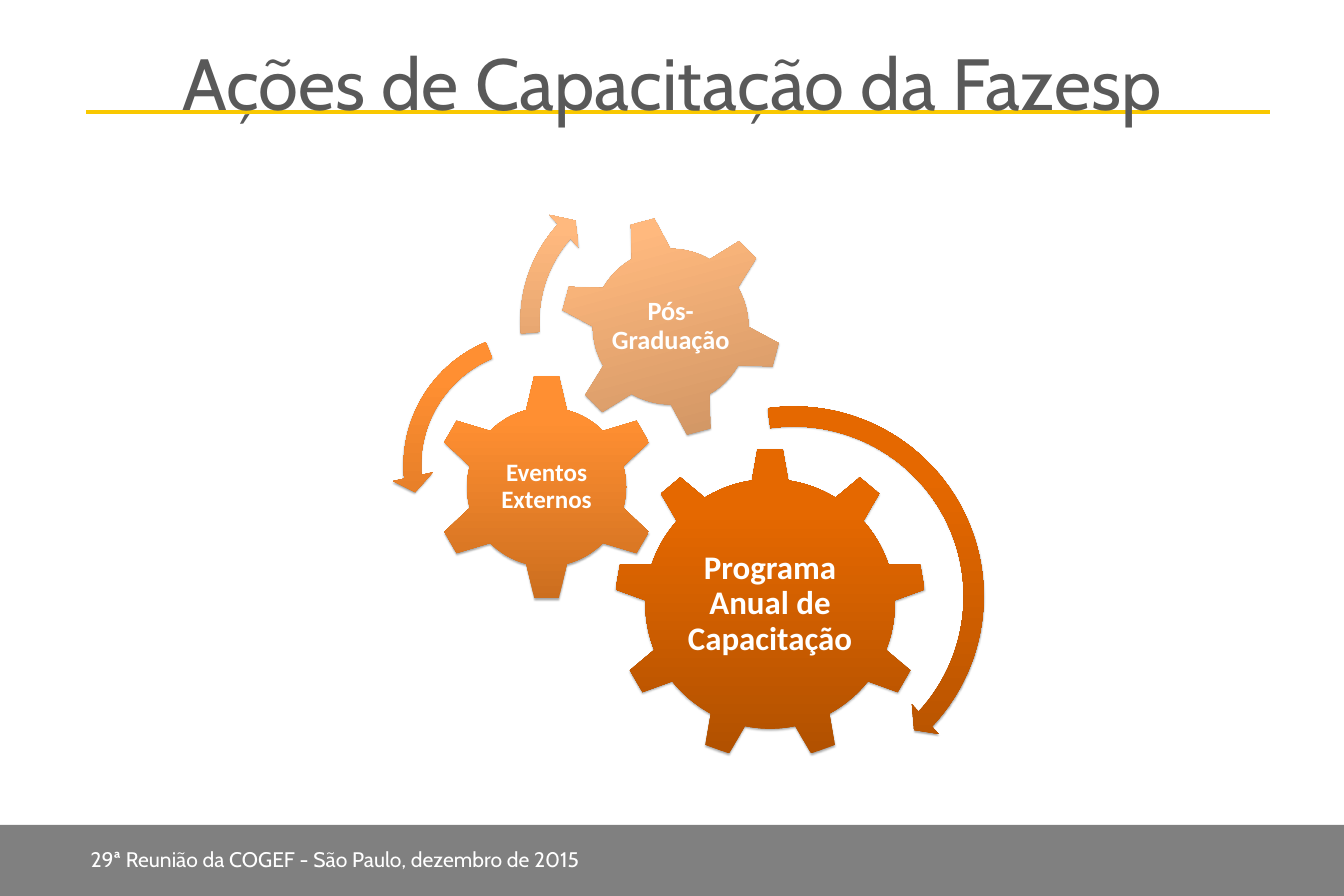
from dataclasses import dataclass

from lxml import etree
from pptx import Presentation
from pptx.dml.color import RGBColor
from pptx.enum.shapes import MSO_CONNECTOR, MSO_SHAPE
from pptx.enum.text import MSO_ANCHOR, PP_ALIGN
from pptx.oxml.ns import qn
from pptx.util import Inches, Pt

RECT = MSO_SHAPE.RECTANGLE
GEAR6, GEAR9 = MSO_SHAPE.GEAR_6, MSO_SHAPE.GEAR_9
ARC, LEFT_ARC = MSO_SHAPE.CIRCULAR_ARROW, MSO_SHAPE.LEFT_CIRCULAR_ARROW
STRAIGHT = MSO_CONNECTOR.STRAIGHT
LEFT, CENTER = PP_ALIGN.LEFT, PP_ALIGN.CENTER
TOP, MIDDLE = MSO_ANCHOR.TOP, MSO_ANCHOR.MIDDLE

WIDTH, HEIGHT = Inches(28.35), Inches(18.9)
COLS, ROWS = 30, 20


@dataclass(frozen=True)
class Theme:
    head: str = "Cabin"
    body: str = "Calibri"
    title: int = 110
    foot: int = 32
    big: int = 50
    mid: int = 40
    small: int = 38
    rule: int = 6
    gray: str = "808080"
    ink: str = "595959"
    white: str = "FFFFFF"
    gold: str = "F9C800"
    # Gradient colours from bottom to top
    dark: tuple = ("B05000", "E56800", "E66800")
    warm: tuple = ("CC6E1E", "FF8F32", "FF9033")
    pale: tuple = ("C78E5F", "FFB97E", "FFBA80")


def add(parent, tag, **attrs):
    return etree.SubElement(parent, qn(tag), {k: str(v) for k, v in attrs.items()})


class Deck:
    def __init__(self, theme):
        self.theme = theme
        self.file = Presentation()
        self.file.slide_width, self.file.slide_height = WIDTH, HEIGHT
        self.slide = self.file.slides.add_slide(self.file.slide_layouts[6])

    def place(self, col, row, wide, high):
        """Turn grid cells into slide lengths."""
        x, y = WIDTH / COLS, HEIGHT / ROWS
        return [round(v) for v in (col * x, row * y, wide * x, high * y)]

    def shape(self, kind, box):
        item = self.slide.shapes.add_shape(kind, *self.place(*box))
        item.line.fill.background()
        item.shadow.inherit = False
        return item

    def bar(self, box, color):
        item = self.shape(RECT, box)
        item.fill.solid()
        item.fill.fore_color.rgb = RGBColor.from_string(color)

    def rule(self, start, end, row, color):
        x, y, w, _ = self.place(start, row, end - start, 0)
        item = self.slide.shapes.add_connector(STRAIGHT, x, y, x + w, y)
        item.line.width = Pt(self.theme.rule)
        item.line.color.rgb = RGBColor.from_string(color)
        add(item._element.spPr, "a:effectLst")

    def shade(self, kind, center, size, tones, turn=0, bends=()):
        """Draw a shaded gear or arc around a centre point."""
        col, row = center
        item = self.shape(kind, (col - size / 2, row - size / 2, size, size))
        item.rotation = turn
        for i, bend in enumerate(bends):
            item.adjustments[i] = bend
        item.fill.gradient()
        item.fill.gradient_angle = 90
        props = item._element.spPr
        stops = props.find(".//" + qn("a:gsLst"))
        for stop in list(stops):
            stops.remove(stop)
        for pos, tone in zip((0, 80000, 100000), tones):
            add(add(stops, "a:gs", pos=pos), "a:srgbClr", val=tone)
        cast = add(props.find(qn("a:effectLst")), "a:outerShdw", blurRad=Pt(3.1),
                   dist=Pt(1.8), dir=5400000, rotWithShape=0)
        add(add(cast, "a:srgbClr", val="000000"), "a:alpha", val=35000)

    def text(self, box, words, size, color, font, align=LEFT, anchor=TOP):
        frame = self.slide.shapes.add_textbox(*self.place(*box)).text_frame
        frame.word_wrap = True
        frame.vertical_anchor = anchor
        para = frame.paragraphs[0]
        para.alignment = align
        run = para.add_run()
        run.text = words
        run.font.size = Pt(size)
        run.font.name = font
        run.font.color.rgb = RGBColor.from_string(color)
        return frame

    def label(self, center, wide, high, words, size):
        col, row = center
        frame = self.text((col - wide / 2, row - high / 2, wide, high), words, size,
                          self.theme.white, self.theme.body, CENTER, MIDDLE)
        frame.margin_left = frame.margin_right = Inches(0.05)
        para = frame.paragraphs[0]
        para.line_spacing = 0.9
        para.runs[0].font.bold = True


def main():
    look = Theme()
    deck = Deck(look)
    deck.bar((0, 18.41, COLS, 1.59), look.gray)
    deck.rule(1.92, 28.34, 2.5, look.gold)
    deck.text((1.92, 18.84, 18.25, 0.67),
              "29ª Reunião da COGEF - São Paulo, dezembro de 2015",
              look.foot, look.white, look.head)
    deck.text((1.5, 0.8, 27, 1.45), "Ações de Capacitação da Fazesp",
              look.title, look.ink, look.head, CENTER)

    gears = (
        (GEAR9, (17.19, 13.48), 6.96, look.dark, 0,
         4.17, 3.58, "Programa Anual de Capacitação", look.big),
        (GEAR6, (12.2, 10.87), 5.07, look.warm, 0,
         2.52, 2.5, "Eventos Externos", look.small),
        (GEAR6, (14.97, 7.29), 4.96, look.pale, 345,
         2.78, 2.78, "Pós-Graduação", look.mid),
    )
    for kind, center, size, tones, turn, *label in gears:
        deck.shade(kind, center, size, tones, turn)
        deck.label(center, *label)

    arcs = (
        (ARC, (17.72, 13.31), 8.92, look.dark, (0.05, 2.99, 25.83, 157.25, 0.05)),
        (LEFT_ARC, (11.99, 10.39), 6.48, look.warm, (0.06, 4.3, 104.89, 148.38, 0.07)),
        (ARC, (14.83, 7.17), 6.98, look.pale, (0.06, 3.94, 133.14, 105.08, 0.07)),
    )
    for kind, center, size, tones, bends in arcs:
        deck.shade(kind, center, size, tones, bends=bends)
    deck.file.save("out.pptx")


if __name__ == "__main__":
    main()
